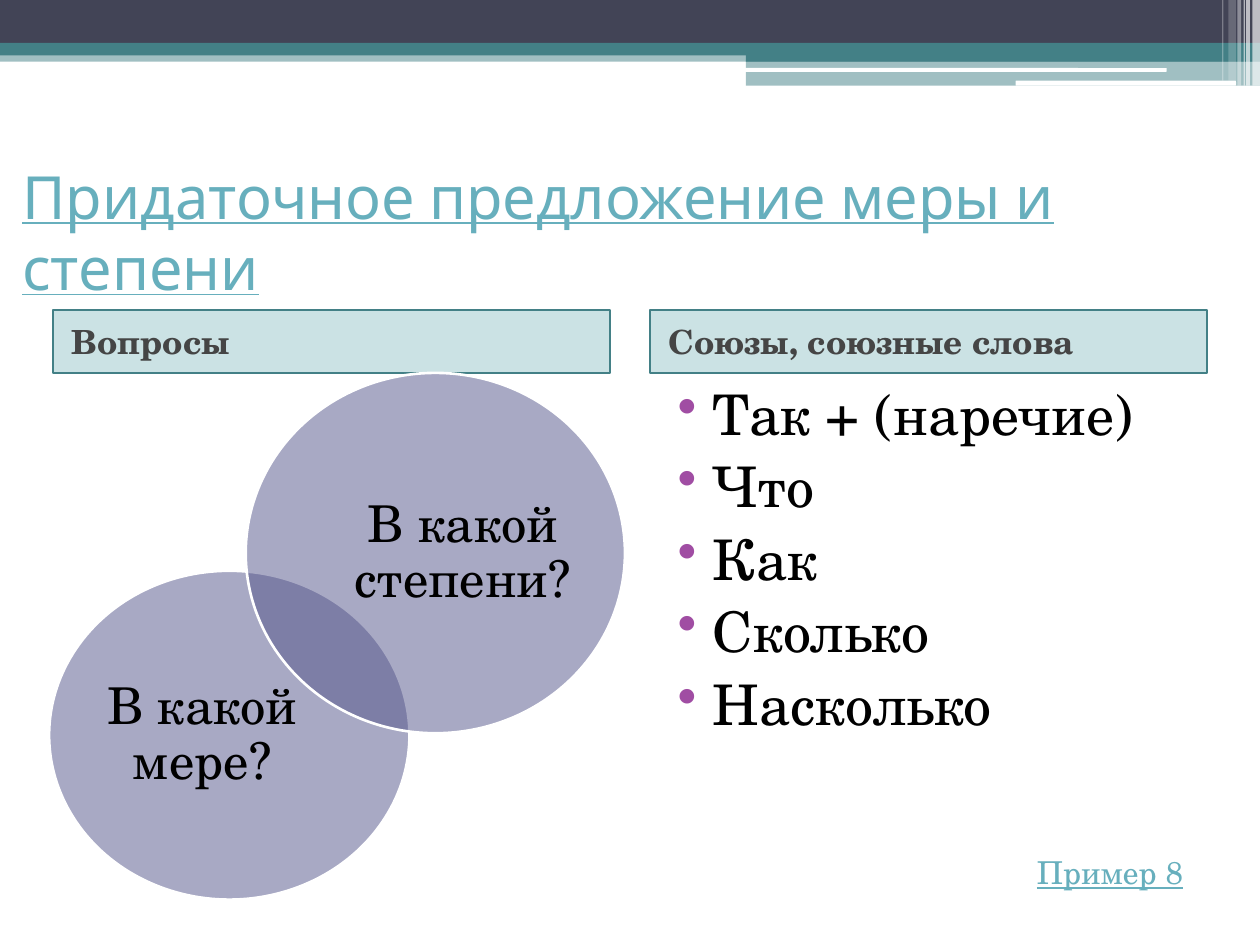
from typing import NamedTuple, Optional

from lxml import etree
from pptx import Presentation
from pptx.dml.color import RGBColor
from pptx.enum.shapes import MSO_SHAPE as Shape
from pptx.enum.text import MSO_ANCHOR as Anchor, PP_ALIGN as Align
from pptx.oxml.ns import qn
from pptx.util import Inches, Pt

WHITE = RGBColor(0xFF, 0xFF, 0xFF)
BLACK = RGBColor(0, 0, 0)
NAVY = RGBColor(0x42, 0x44, 0x56)
TEAL = RGBColor(0x43, 0x80, 0x86)
HEADING_FILL = RGBColor(0x32, 0x8E, 0x97)
HEADING_TEXT = RGBColor(0x45, 0x45, 0x45)
LINK = RGBColor(0x67, 0xAF, 0xBD)
VIOLET = RGBColor(0x53, 0x54, 0x8A)
BULLET = RGBColor(0xA0, 0x4D, 0xA3)
TITLE_FONT = "Karla"
BODY_FONT = "TeX Gyre Schola"


class Box(NamedTuple):
    left: float
    top: float
    width: float
    height: float


class Band(NamedTuple):
    box: Box
    color: RGBColor
    alpha: int = 100
    kind: Shape = Shape.RECTANGLE


class Stripe(NamedTuple):
    left: float
    width: float
    height: float
    alpha: int


class Circle(NamedTuple):
    box: Box
    text_box: Box
    text: str


BANDS = [
    Band(Box(0, 0.4, 10, 0.09), TEAL, 50),
    Band(Box(0, 0, 10, 0.34), NAVY),
    Band(Box(0, 0.34, 10, 0.1), TEAL),
    Band(Box(5.92, 0.39, 4.08, 0.1), TEAL),
    Band(Box(5.92, 0.48, 4.08, 0.2), TEAL, 50),
    Band(Box(5.91, 0.54, 3.35, 0.03), WHITE, kind=Shape.ROUNDED_RECTANGLE),
    Band(Box(8.06, 0.64, 1.75, 0.04), WHITE, kind=Shape.ROUNDED_RECTANGLE),
]
STRIPES = [
    Stripe(9.94, 0.06, 0.68, 65),
    Stripe(9.89, 0.03, 0.68, 65),
    Stripe(9.87, 0.01, 0.68, 60),
    Stripe(9.82, 0.03, 0.68, 40),
    Stripe(9.75, 0.06, 0.64, 20),
    Stripe(9.7, 0.01, 0.64, 30),
]
COLUMN_LEFTS = (0.42, 5.16)
COLUMN_WIDTH = 4.42
HEADINGS = ("Вопросы", "Союзы, союзные слова")
CIRCLES = [
    Circle(Box(0.39, 4.53, 2.86, 2.61), Box(0.78, 4.84, 1.65, 1.99), "В какой мере?"),
    Circle(Box(1.95, 2.96, 3.01, 2.86), Box(2.81, 3.3, 1.73, 2.19), "В какой степени?"),
]
CONJUNCTIONS = ("Так + (наречие)", "Что", "Как", "Сколько", "Насколько")


def add_filled(s, kind: Shape, box: Box, color: RGBColor, alpha: int = 100,
               line: Optional[RGBColor] = None, line_width: float = 1):
    """Add a preset shape; alpha is its opacity in percent."""
    sp = s.shapes.add_shape(kind, *map(Inches, box))
    sp.shadow.inherit = False
    sp.fill.solid()
    sp.fill.fore_color.rgb = color
    if alpha < 100:
        clr = sp.fill._xPr.find(qn("a:solidFill"))[0]
        etree.SubElement(clr, qn("a:alpha"), val=str(alpha * 1000))
    if line is None:
        sp.line.fill.background()
    else:
        sp.line.color.rgb = line
        sp.line.width = Pt(line_width)
    return sp


def add_text(s, box: Box, anchor: Anchor = Anchor.TOP):
    tf = s.shapes.add_textbox(*map(Inches, box)).text_frame
    tf.word_wrap = True
    tf.vertical_anchor = anchor
    return tf


def write(p, text: str, size: float, color: RGBColor, font: str = BODY_FONT,
          bold: bool = False, underline: bool = False) -> None:
    p.text = text
    p.font.size = Pt(size)
    p.font.name = font
    p.font.color.rgb = color
    p.font.bold = bold
    p.font.underline = underline


def indent(p, left: float, first: float = 0) -> None:
    pPr = p._p.get_or_add_pPr()
    pPr.set("marL", str(Inches(left)))
    pPr.set("indent", str(Inches(first)))


def add_bullet(p, color: RGBColor) -> None:
    pPr = p._p.get_or_add_pPr()
    bu_clr = etree.Element(qn("a:buClr"))
    etree.SubElement(bu_clr, qn("a:srgbClr"), val=str(color))
    bu_char = etree.Element(qn("a:buChar"), char="•")
    at = pPr.index(pPr.find(qn("a:defRPr")))
    pPr[at:at] = [bu_clr, bu_char]


def add_heading(s, left: float, text: str) -> None:
    sp = add_filled(s, Shape.RECTANGLE, Box(left, 2.46, COLUMN_WIDTH, 0.5),
                    HEADING_FILL, 25, TEAL)
    tf = sp.text_frame
    tf.vertical_anchor = Anchor.MIDDLE
    p = tf.paragraphs[0]
    write(p, text, 19, HEADING_TEXT, bold=True)
    p.alignment = Align.LEFT
    p.space_before = Pt(3)
    indent(p, 0.05)


def add_circle(s, circle: Circle) -> None:
    add_filled(s, Shape.OVAL, circle.box, VIOLET, 50, WHITE, 1.5)
    tf = add_text(s, circle.text_box, Anchor.MIDDLE)
    tf.margin_left = tf.margin_right = tf.margin_top = tf.margin_bottom = 0
    p = tf.paragraphs[0]
    write(p, circle.text, 29, BLACK)
    p.alignment = Align.CENTER
    p.line_spacing = 0.9


def add_bullets(s, box: Box, items: tuple[str, ...]) -> None:
    tf = add_text(s, box)
    for i, item in enumerate(items):
        p = tf.add_paragraph() if i else tf.paragraphs[0]
        write(p, item, 32, BLACK)
        p.space_before = Pt(3)
        indent(p, 0.4, -0.28)
        add_bullet(p, BULLET)


def main() -> None:
    prs = Presentation()
    prs.slide_width, prs.slide_height = Inches(10), Inches(7.5)
    s = prs.slides.add_slide(prs.slide_layouts[6])

    for band in BANDS:
        add_filled(s, band.kind, band.box, band.color, band.alpha)
    for stripe in STRIPES:
        add_filled(s, Shape.RECTANGLE, Box(stripe.left, 0, stripe.width, stripe.height),
                   WHITE, stripe.alpha)

    title = add_text(s, Box(0.08, 1.25, 9.92, 1.17), Anchor.MIDDLE)
    write(title.paragraphs[0], "Придаточное предложение меры и степени", 34, LINK,
          TITLE_FONT, underline=True)

    for left, heading in zip(COLUMN_LEFTS, HEADINGS):
        add_heading(s, left, heading)
    for circle in CIRCLES:
        add_circle(s, circle)
    add_bullets(s, Box(COLUMN_LEFTS[1], 2.96, COLUMN_WIDTH, 4.25), CONJUNCTIONS)

    example = add_text(s, Box(8.13, 6.72, 1.48, 0.4))
    write(example.paragraphs[0], "Пример 8", 18, LINK, underline=True)

    prs.save("out.pptx")


if __name__ == "__main__":
    main()
